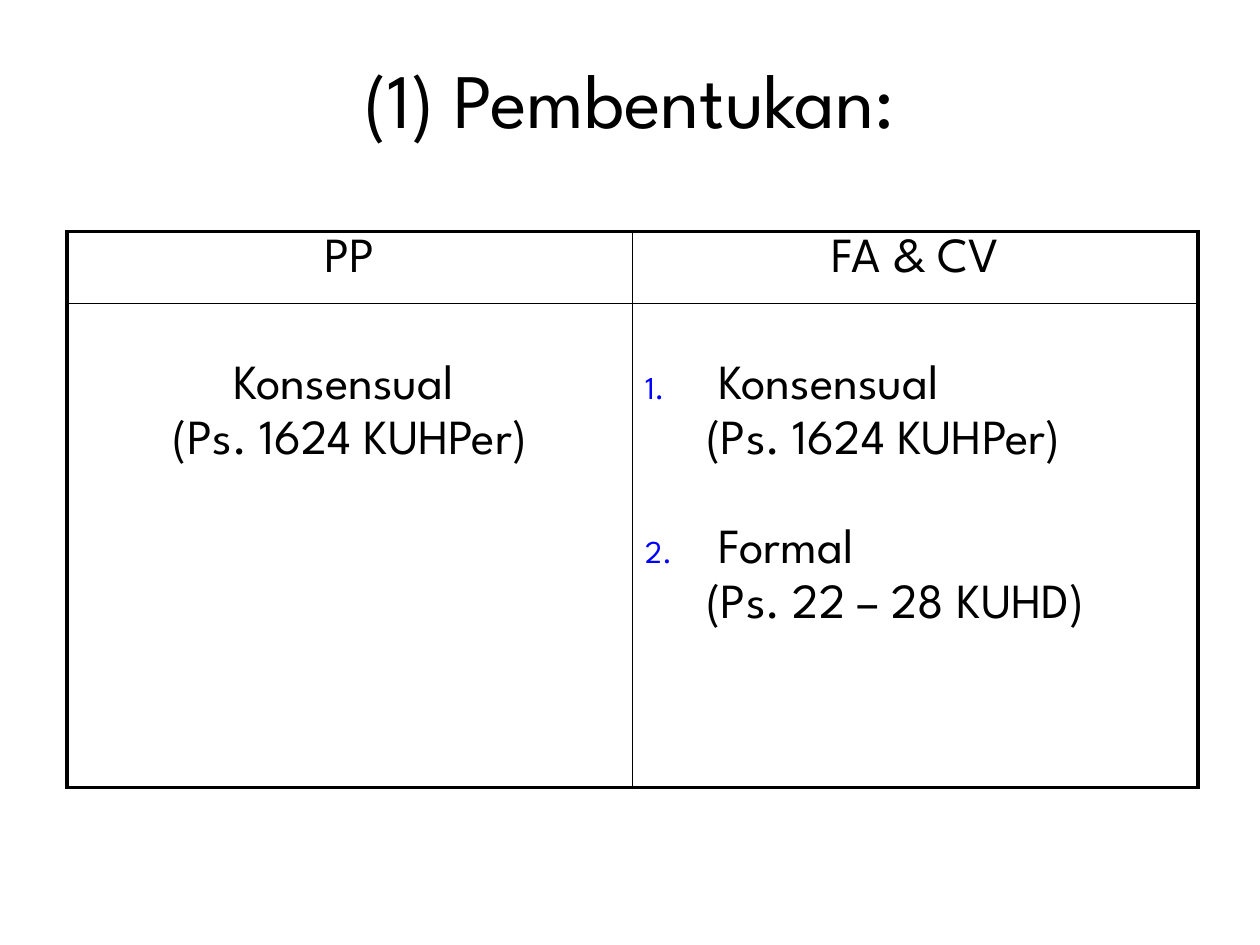
from lxml.etree import SubElement
from pptx import Presentation
from pptx.dml.color import RGBColor
from pptx.enum.text import MSO_ANCHOR, PP_ALIGN
from pptx.oxml.ns import qn
from pptx.util import Cm, Pt

FONT = "League Spartan"
BLACK, BLUE = "000000", "0000FF"
THICK, THIN = 2.25, 1
TITLE = "(1) Pembentukan:"
HEADINGS = ["PP", "FA & CV"]
CONSENSUAL = ["Konsensual ", "(Ps. 1624 KUHPer)"]
NUMBERED = [("Konsensual", "(Ps. 1624 KUHPer)"), ("Formal", "(Ps. 22 – 28 KUHD)")]

LINE_GAP, GROUP_GAP = 5.6, 37
BODY_MARGIN_TOP = 1.24
NUMBER_INDENT, DETAIL_INDENT = 1.48, 1.23
COLUMN_WIDTHS = [11.4, 11.4]
ROW_HEIGHTS = [1.45, 9.75]


def color(value):
    return RGBColor.from_string(value)


def apply_format(target, values):
    for name, value in values.items():
        setattr(target, name, value)


def write(paragraph, text, size, align=PP_ALIGN.LEFT, gap=0):
    run = paragraph.add_run()
    run.text = text
    apply_format(run.font, {"name": FONT, "size": Pt(size), "bold": False})
    run.font.color.rgb = color(BLACK)
    apply_format(paragraph, {"alignment": align, "space_before": Pt(gap)})


def indent(paragraph, left, first=0):
    properties = paragraph._p.get_or_add_pPr()
    properties.set("marL", str(Cm(left)))
    properties.set("indent", str(Cm(first)))
    return properties


def number(paragraph, start):
    properties = indent(paragraph, NUMBER_INDENT, -NUMBER_INDENT)
    bullet_color = SubElement(properties, qn("a:buClr"))
    SubElement(bullet_color, qn("a:srgbClr"), val=BLUE)
    SubElement(properties, qn("a:buSzPct"), val="65000")
    SubElement(properties, qn("a:buFont"), typeface=FONT)
    SubElement(properties, qn("a:buAutoNum"), type="arabicPeriod", startAt=str(start))


def draw_borders(cell, widths):
    properties = cell._tc.get_or_add_tcPr()
    for side, width in widths.items():
        line = SubElement(properties, qn(f"a:ln{side}"), w=str(Pt(width)))
        fill = SubElement(line, qn("a:solidFill"))
        SubElement(fill, qn("a:srgbClr"), val=BLACK)


def next_paragraph(frame):
    first = frame.paragraphs[0]
    return frame.add_paragraph() if first.runs else first


def fill_centered(frame, lines):
    for text in lines:
        write(next_paragraph(frame), text, 28, PP_ALIGN.CENTER, LINE_GAP)


def fill_numbered(frame, items):
    for position, (name, detail) in enumerate(items, 1):
        paragraph = next_paragraph(frame)
        write(paragraph, name, 28, gap=LINE_GAP if position == 1 else GROUP_GAP)
        number(paragraph, position)
        paragraph = next_paragraph(frame)
        write(paragraph, detail, 28, gap=LINE_GAP)
        indent(paragraph, DETAIL_INDENT)


def add_title(slide):
    title = slide.shapes.title
    apply_format(title, {"left": Cm(1.27), "top": Cm(0.76),
                         "width": Cm(22.86), "height": Cm(2.41)})
    title.text_frame.vertical_anchor = MSO_ANCHOR.MIDDLE
    write(title.text_frame.paragraphs[0], TITLE, 44, PP_ALIGN.CENTER)


def add_comparison(slide):
    rows, columns = len(ROW_HEIGHTS), len(COLUMN_WIDTHS)
    table = slide.shapes.add_table(rows, columns, Cm(1.35), Cm(4.67),
                                   Cm(sum(COLUMN_WIDTHS)), Cm(sum(ROW_HEIGHTS))).table
    apply_format(table, {"first_row": False, "horz_banding": False})
    for column, width in zip(table.columns, COLUMN_WIDTHS):
        column.width = Cm(width)
    for row, height in zip(table.rows, ROW_HEIGHTS):
        row.height = Cm(height)
    for row in range(rows):
        for column in range(columns):
            cell = table.cell(row, column)
            outer = {"L": column == 0, "R": column == columns - 1,
                     "T": row == 0, "B": row == rows - 1}
            draw_borders(cell, {side: THICK if edge else THIN
                                for side, edge in outer.items()})
            cell.fill.background()
            cell.margin_top = Cm(BODY_MARGIN_TOP if row else 0.13)
    for column, heading in enumerate(HEADINGS):
        fill_centered(table.cell(0, column).text_frame, [heading])
    fill_centered(table.cell(1, 0).text_frame, CONSENSUAL)
    fill_numbered(table.cell(1, 1).text_frame, NUMBERED)


def main():
    presentation = Presentation()
    apply_format(presentation, {"slide_width": Cm(25.4), "slide_height": Cm(19.05)})
    slide = presentation.slides.add_slide(presentation.slide_layouts[5])
    add_title(slide)
    add_comparison(slide)
    presentation.save("out.pptx")


if __name__ == "__main__":
    main()
